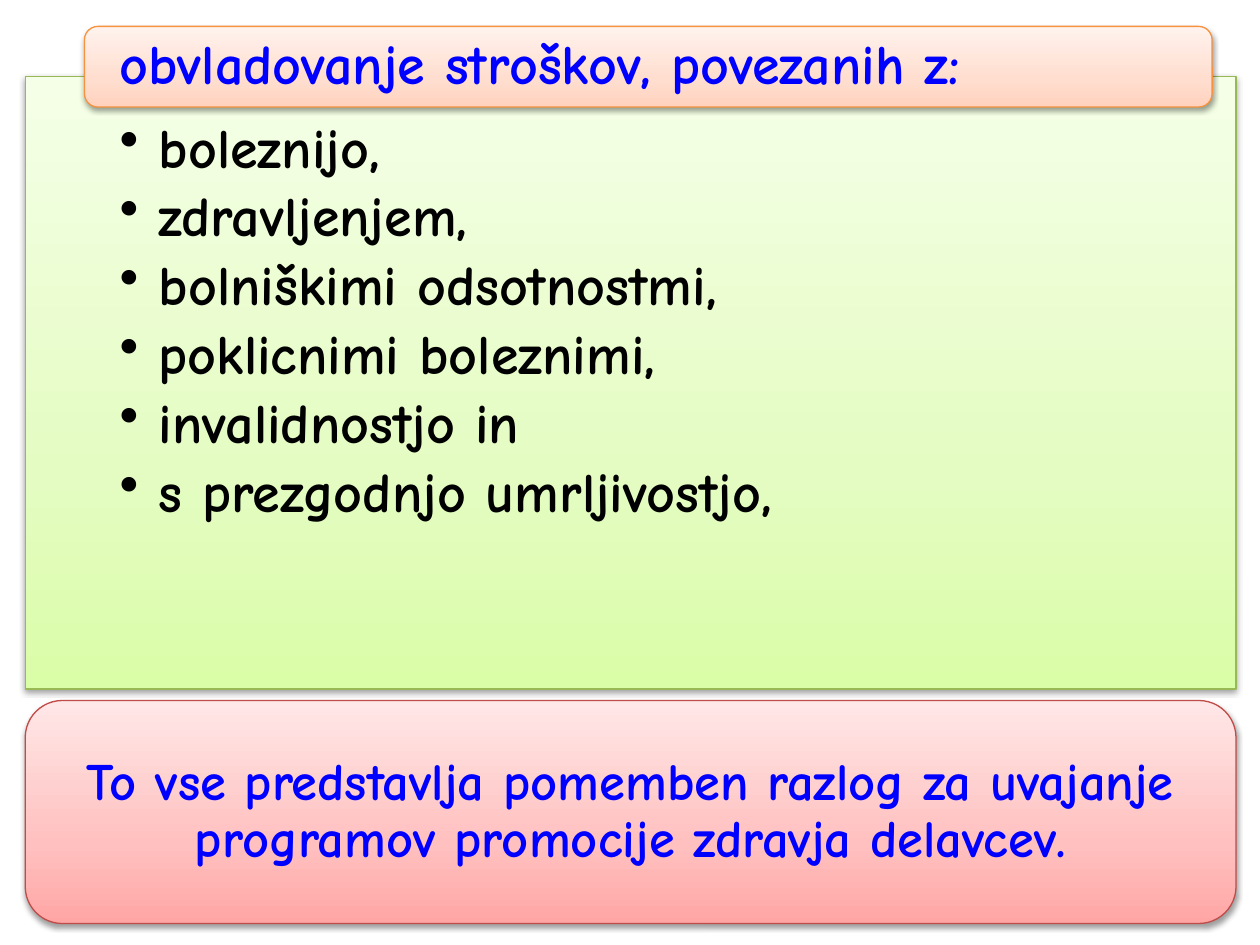
"""Build a slide on the costs that workplace health promotion keeps under control."""
from copy import deepcopy

from lxml import etree
from pptx import Presentation
from pptx.dml.color import RGBColor
from pptx.enum.shapes import MSO_SHAPE as SHAPE
from pptx.enum.text import MSO_ANCHOR as ANCHOR, PP_ALIGN as ALIGN
from pptx.oxml import parse_xml
from pptx.oxml.ns import nsdecls, qn
from pptx.util import Inches, Pt

BLACK = RGBColor(0x00, 0x00, 0x00)
BLUE = RGBColor(0x00, 0x00, 0xFF)
GREENS = [RGBColor(0xDA, 0xFD, 0xA7), RGBColor(0xE4, 0xFC, 0xC2), RGBColor(0xF5, 0xFF, 0xE7)]
ORANGES = [RGBColor(0xFF, 0xD2, 0xBD), RGBColor(0xFF, 0xDE, 0xD0), RGBColor(0xFF, 0xF2, 0xED)]
REDS = [RGBColor(0xFF, 0xA6, 0xA5), RGBColor(0xFF, 0xC0, 0xBF), RGBColor(0xFF, 0xE7, 0xE7)]
GREEN_LINE = RGBColor(0x98, 0xB9, 0x55)
ORANGE_LINE = RGBColor(0xF6, 0x92, 0x40)
RED_LINE = RGBColor(0xBF, 0x4C, 0x48)
FONT = "Comic Neue"
SHADOW = (
    f'<a:outerShdw {nsdecls("a")} blurRad="{Pt(3.1)}" dist="{Pt(1.6)}" dir="5400000" '
    'rotWithShape="0"><a:srgbClr val="000000"><a:alpha val="38000"/></a:srgbClr></a:outerShdw>'
)

prs = Presentation()
prs.slide_width, prs.slide_height = Inches(10), Inches(7.5)
COL, ROW = prs.slide_width / 100, prs.slide_height / 75
s = prs.slides.add_slide(prs.slide_layouts[6])


def add_panel(kind, x, y, w, h, colors, line, insets, anchor):
    sp = s.shapes.add_shape(kind, int(x * COL), int(y * ROW), int(w * COL), int(h * ROW))
    sp.fill.gradient()
    sp.fill.gradient_angle = 90
    stops = sp._element.spPr.find(".//" + qn("a:gsLst"))
    stops.append(deepcopy(stops[0]))
    for stop, position, color in zip(sp.fill.gradient_stops, (0, 0.35, 1), colors):
        stop.position = position
        stop.color.rgb = color
    sp.line.color.rgb = line
    sp.line.width = Pt(0.75)
    sp.shadow.inherit = False
    sp._element.spPr.find(qn("a:effectLst")).append(parse_xml(SHADOW))
    tf = sp.text_frame
    tf.word_wrap = True
    tf.vertical_anchor = anchor
    tf.margin_left, tf.margin_top, tf.margin_right, tf.margin_bottom = map(Inches, insets)
    return tf


def write(p, text, size=32, color=BLUE, align=ALIGN.LEFT, after=35, bullet=None):
    p.alignment = align
    p.line_spacing = 0.9
    pPr = p._p.get_or_add_pPr()
    spacing = etree.SubElement(pPr, qn("a:spcAft"))
    etree.SubElement(spacing, qn("a:spcPct"), val=str(after * 1000))
    if bullet:
        p.level = 1
        pPr.set("marL", str(Inches(0.31)))
        pPr.set("indent", str(Inches(-0.31)))
        etree.SubElement(pPr, qn("a:buChar"), char=bullet)
    r = p.add_run()
    r.text = text
    r.font.name, r.font.size, r.font.bold = FONT, Pt(size), True
    r.font.color.rgb = color


tf = add_panel(SHAPE.RECTANGLE, 2, 6.1, 96.1, 48.6, GREENS, GREEN_LINE,
               (0.75, 0.34, 0.75, 0.25), ANCHOR.TOP)
costs = ["boleznijo,", "zdravljenjem,", "bolniškimi odsotnostmi,",
         "poklicnimi boleznimi,", "invalidnostjo in", "s prezgodnjo umrljivostjo,"]
for i, cost in enumerate(costs):
    p = tf.add_paragraph() if i else tf.paragraphs[0]
    write(p, cost, color=BLACK, after=15, bullet="•")

tf = add_panel(SHAPE.ROUNDED_RECTANGLE, 6.7, 2.1, 89.5, 6.4, ORANGES, ORANGE_LINE,
               (0.25, 0, 0.25, 0), ANCHOR.MIDDLE)
write(tf.paragraphs[0], "obvladovanje stroškov, povezanih z:")

tf = add_panel(SHAPE.ROUNDED_RECTANGLE, 2, 55.6, 96.1, 17.7, REDS, RED_LINE,
               (0.12, 0.12, 0.12, 0.12), ANCHOR.MIDDLE)
write(tf.paragraphs[0],
      "To vse predstavlja pomemben razlog za uvajanje programov promocije zdravja delavcev.",
      size=30, align=ALIGN.CENTER)

prs.save("out.pptx")
